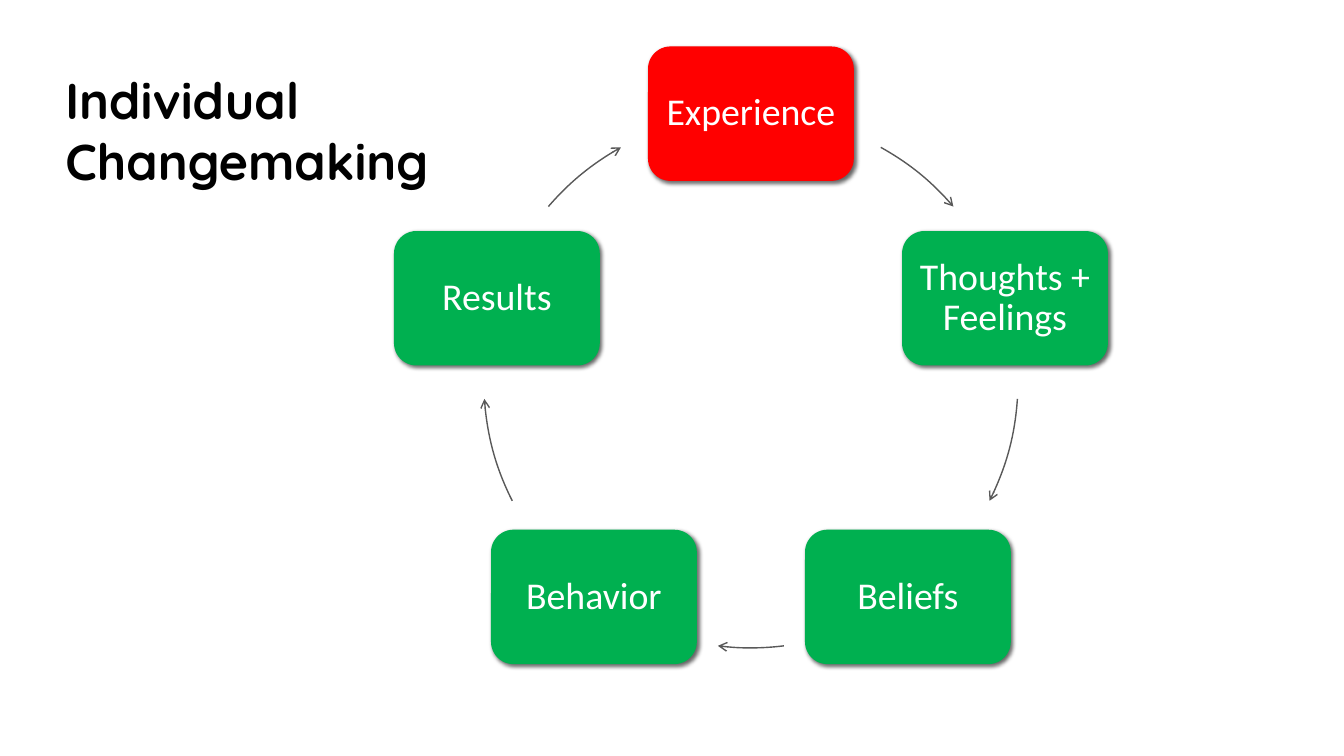
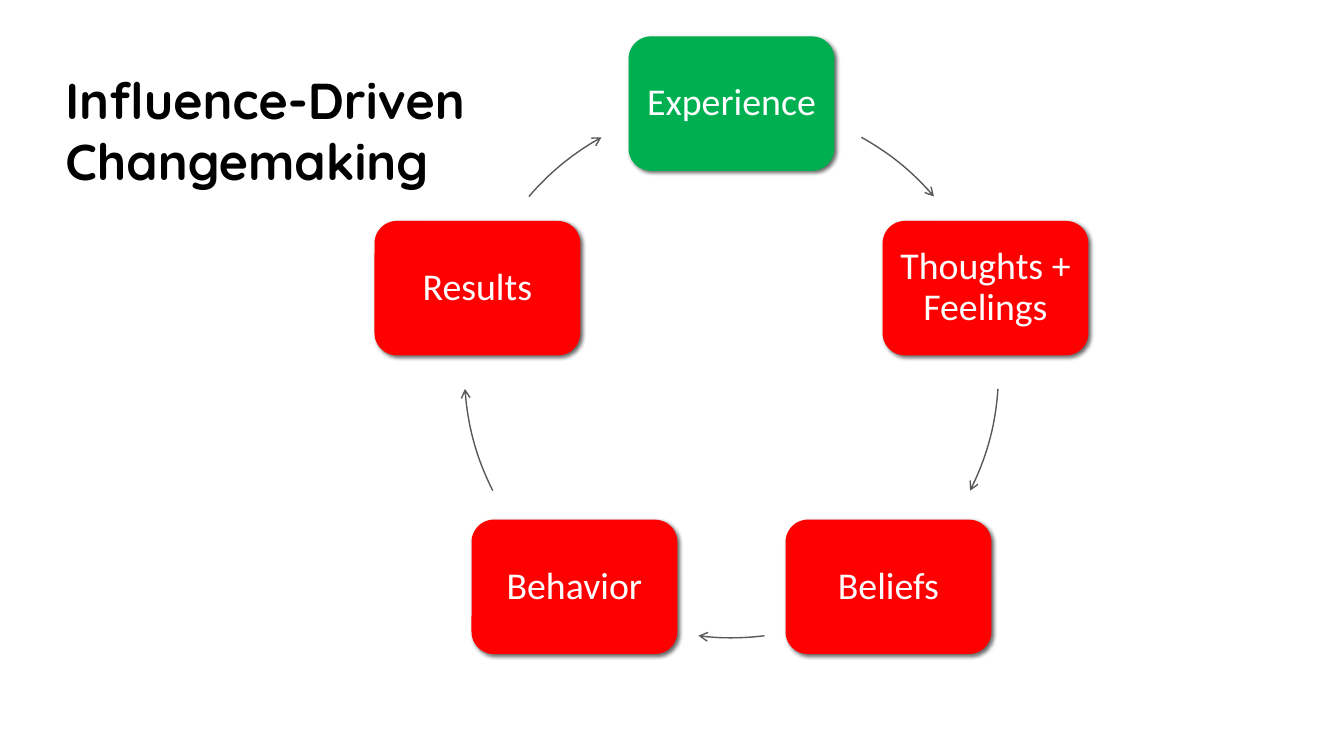
from dataclasses import dataclass
from math import cos, radians, sin

from lxml import etree
from pptx import Presentation
from pptx.dml.color import RGBColor
from pptx.enum.shapes import MSO_SHAPE
from pptx.enum.text import MSO_ANCHOR, MSO_AUTO_SIZE, PP_ALIGN
from pptx.oxml.ns import qn
from pptx.util import Pt

ROUNDED, ARC = MSO_SHAPE.ROUNDED_RECTANGLE, MSO_SHAPE.ARC
MIDDLE, CENTER = MSO_ANCHOR.MIDDLE, PP_ALIGN.CENTER
GROW = MSO_AUTO_SIZE.SHAPE_TO_FIT_TEXT

RED = RGBColor(0xFF, 0x00, 0x00)
GREEN = RGBColor(0x00, 0xB0, 0x50)
WHITE = RGBColor(0xFF, 0xFF, 0xFF)
BLACK = RGBColor(0x00, 0x00, 0x00)
GRAY = RGBColor(0x59, 0x59, 0x59)

BODY_FONT, TITLE_FONT = "Calibri", "Quicksand"
RADIUS = 190.8
STEP_WIDTH, STEP_HEIGHT = 147, 96
STEP_INSET = 8
STEPS = ("Experience", "Thoughts + Feelings", "Beliefs", "Behavior", "Results")


@dataclass(frozen=True)
class Arrow:
    start: float
    end: float


@dataclass(frozen=True)
class Cycle:
    title: str
    center_x: float
    center_y: float
    first_color: RGBColor
    other_color: RGBColor


ARROWS = (
    Arrow(29.1, 49.3),
    Arrow(93.9, 116.7),
    Arrow(172.9, 187.1),
    Arrow(243.3, 266.1),
    Arrow(310.7, 330.9),
)
CYCLES = (
    Cycle("Individual Changemaking", 536.4, 272, RED, GREEN),
    Cycle("Influence-Driven Changemaking", 522.5, 264.8, GREEN, RED),
)


def style_text(para, font_name: str, size: float, color: RGBColor, bold: bool = False) -> None:
    for span in para.runs:
        span.font.name = font_name
        span.font.size = Pt(size)
        span.font.color.rgb = color
        span.font.bold = bold


def add_shadow(shape) -> None:
    shape.shadow.inherit = False
    effects = shape._element.spPr.find(qn("a:effectLst"))
    shadow = etree.SubElement(
        effects, qn("a:outerShdw"), blurRad=str(Pt(3)), dist=str(Pt(2)),
        dir="2700000", algn="ctr", rotWithShape="0")
    color = etree.SubElement(shadow, qn("a:srgbClr"), val=str(BLACK))
    etree.SubElement(color, qn("a:alpha"), val="60000")


def add_title(page, title: str) -> None:
    box = page.shapes.add_textbox(Pt(39.6), Pt(46), Pt(304), Pt(94.3))
    frame = box.text_frame
    frame.word_wrap = True
    frame.auto_size = GROW
    frame.text = title
    style_text(frame.paragraphs[0], TITLE_FONT, 36, BLACK, bold=True)


def add_step(page, label: str, x: float, y: float, fill: RGBColor) -> None:
    box = page.shapes.add_shape(
        ROUNDED, Pt(x - STEP_WIDTH / 2), Pt(y - STEP_HEIGHT / 2), Pt(STEP_WIDTH), Pt(STEP_HEIGHT))
    box.fill.solid()
    box.fill.fore_color.rgb = fill
    box.line.fill.background()
    add_shadow(box)
    frame = box.text_frame
    frame.word_wrap = True
    frame.vertical_anchor = MIDDLE
    frame.margin_left = frame.margin_right = Pt(STEP_INSET)
    frame.margin_top = frame.margin_bottom = Pt(STEP_INSET)
    frame.text = label
    para = frame.paragraphs[0]
    para.alignment = CENTER
    para.line_spacing = 0.9
    style_text(para, BODY_FONT, 27, WHITE)


def add_arrow(page, cycle: Cycle, arrow: Arrow) -> None:
    arc = page.shapes.add_shape(
        ARC, Pt(cycle.center_x - RADIUS), Pt(cycle.center_y - RADIUS), Pt(2 * RADIUS), Pt(2 * RADIUS))
    for index, angle in enumerate((arrow.start, arrow.end)):
        arc.adjustments[index] = (angle - 90) % 360 * 0.6
    arc.fill.background()
    arc.shadow.inherit = False
    arc.line.color.rgb = GRAY
    arc.line.width = Pt(1)
    etree.SubElement(arc.line._get_or_add_ln(), qn("a:tailEnd"), type="arrow")


def add_cycle(deck, cycle: Cycle) -> None:
    page = deck.slides.add_slide(deck.slide_layouts[6])
    for index, (label, arrow) in enumerate(zip(STEPS, ARROWS)):
        angle = radians(index * 360 / len(STEPS))
        x = cycle.center_x + RADIUS * sin(angle)
        y = cycle.center_y - RADIUS * cos(angle)
        add_step(page, label, x, y, cycle.other_color if index else cycle.first_color)
        add_arrow(page, cycle, arrow)
    add_title(page, cycle.title)


def main() -> None:
    deck = Presentation()
    deck.slide_width, deck.slide_height = Pt(960), Pt(540)
    for cycle in CYCLES:
        add_cycle(deck, cycle)
    deck.save("out.pptx")


if __name__ == "__main__":
    main()
